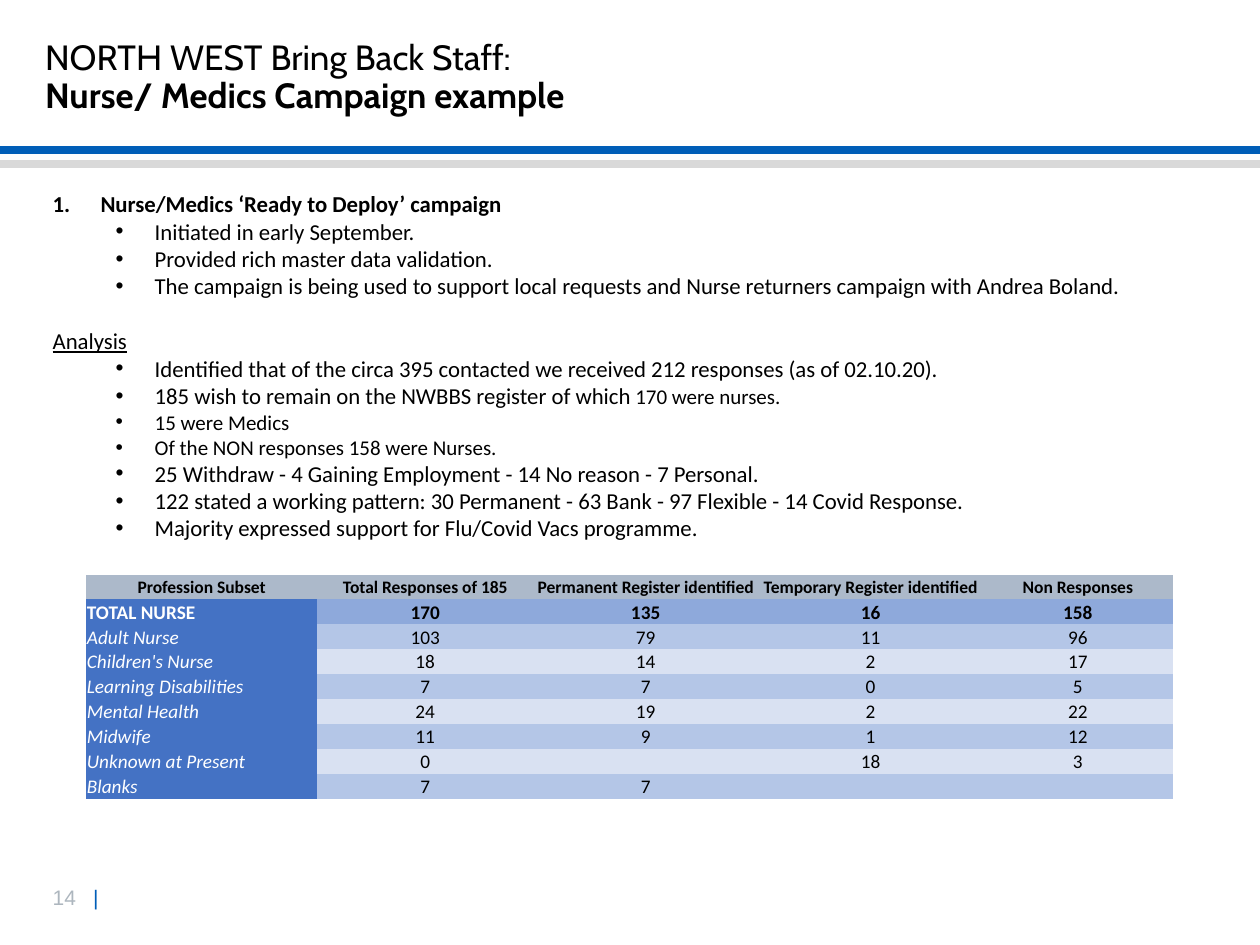
from dataclasses import dataclass
from lxml.etree import SubElement
from pptx import Presentation
from pptx.dml.color import RGBColor
from pptx.enum.shapes import MSO_CONNECTOR
from pptx.enum.text import MSO_ANCHOR, PP_ALIGN
from pptx.oxml.ns import qn
from pptx.util import Inches, Pt


@dataclass(frozen=True)
class Theme:
    black: str = "000000"
    white: str = "FFFFFF"
    blue: str = "005EB8"
    rule: str = "D9D9D9"
    mute: str = "ADB6BE"
    head: str = "ACB9CA"
    side: str = "4472C4"
    total: str = "8EA9DB"
    bands: tuple = ("B4C6E7", "D9E1F2")
    title: int = 20
    body: int = 13
    note: int = 12
    cell: int = 11
    label: int = 10
    text_font: str = "Calibri"
    title_font: str = "Cabin"
    page_font: str = "Arial"


@dataclass(frozen=True)
class Box:
    col: float
    row: float
    wide: float
    high: float


@dataclass(frozen=True)
class Line:
    texts: tuple
    mark: str = ""
    bold: bool = False
    under: bool = False
    gap: float = 0


THEME = Theme()
COLS, ROWS = 100, 75
NO_STYLE = "{2D5ABB26-0587-4C30-8999-92F81FD0307C}"
SMALL, FULL = THEME.note, THEME.body


def point(text: str, size: int = FULL) -> Line:
    return Line(((text, size),), "•")


LINES = [
    Line((("Nurse/Medics ‘Ready to Deploy’ campaign", FULL),), "1.", bold=True),
    point("Initiated in early September."),
    point("Provided rich master data validation."),
    point("The campaign is being used to support local requests and "
          "Nurse returners campaign with Andrea Boland."),
    Line((("Analysis", FULL),), under=True, gap=15.8),
    point("Identified that of the circa 395 contacted we received 212 responses (as of 02.10.20)."),
    Line((("185 wish to remain on the NWBBS register of which ", FULL),
          ("170 were nurses.", SMALL)), "•"),
    point("15 were Medics", SMALL),
    point("Of the NON responses 158 were Nurses.", SMALL),
    point("25 Withdraw - 4 Gaining Employment - 14 No reason - 7 Personal."),
    point("122 stated a working pattern: 30 Permanent - 63 Bank - 97 Flexible - 14 Covid Response."),
    point("Majority expressed support for Flu/Covid Vacs programme."),
]

GRID = [
    ("Profession Subset", "Total Responses of 185", "Permanent Register identified",
     "Temporary Register identified", "Non Responses"),
    ("TOTAL NURSE", "170", "135", "16", "158"),
    ("Adult Nurse", "103", "79", "11", "96"),
    ("Children's Nurse", "18", "14", "2", "17"),
    ("Learning Disabilities", "7", "7", "0", "5"),
    ("Mental Health", "24", "19", "2", "22"),
    ("Midwife", "11", "9", "1", "12"),
    ("Unknown at Present", "0", "", "18", "3"),
    ("Blanks", "7", "7", "", ""),
]
WIDTHS = (18.4, 17.1, 17.9, 17.8, 15.1)

deck = Presentation()
deck.slide_width, deck.slide_height = Inches(10), Inches(7.5)
slide = deck.slides.add_slide(deck.slide_layouts[6])


def across(cols: float) -> int:
    return round(deck.slide_width * cols / COLS)


def down(rows: float) -> int:
    return round(deck.slide_height * rows / ROWS)


def place(box: Box) -> tuple:
    return across(box.col), down(box.row), across(box.wide), down(box.high)


def style(run, size: int, font: str, tint: str, bold: bool = False) -> None:
    run.font.size, run.font.name, run.font.bold = Pt(size), font, bold
    run.font.color.rgb = RGBColor.from_string(tint)


def add_frame(box: Box):
    frame = slide.shapes.add_textbox(*place(box)).text_frame
    frame.word_wrap = True
    return frame


def add_rule(row: float, tint: str) -> None:
    rule = slide.shapes.add_connector(
        MSO_CONNECTOR.STRAIGHT, 0, down(row), across(COLS), down(row))
    rule.line.color.rgb = RGBColor.from_string(tint)
    rule.line.width = Pt(4.5)
    SubElement(rule._element.spPr, qn("a:effectLst"))


def add_mark(para, mark: str) -> None:
    props = para._p.get_or_add_pPr()
    left, hang = (0.81, 0.31) if mark == "•" else (0.38, 0.38)
    props.set("marL", str(Inches(left)))
    props.set("indent", str(-Inches(hang)))
    if mark == "•":
        props.set("lvl", "1")
        SubElement(props, qn("a:buFont"), typeface="Arial")
        SubElement(props, qn("a:buChar"), char=mark)
    else:
        SubElement(props, qn("a:buAutoNum"), type="arabicPeriod")


def add_title(box: Box) -> None:
    para = add_frame(box).paragraphs[0]
    para.text = "NORTH WEST Bring Back Staff:\vNurse/ Medics Campaign example"
    para.line_spacing = 0.9
    for run, bold in zip(para.runs, (False, True)):
        style(run, THEME.title, THEME.title_font, THEME.black, bold)


def add_body(box: Box) -> None:
    frame = add_frame(box)
    for spot, line in enumerate(LINES):
        para = frame.add_paragraph() if spot else frame.paragraphs[0]
        if line.gap:
            para.space_before = Pt(line.gap)
        if line.mark:
            add_mark(para, line.mark)
        for text, size in line.texts:
            run = para.add_run()
            run.text = text
            style(run, size, THEME.text_font, THEME.black, line.bold)
            run.font.underline = line.under


def fill_cell(cell, text: str, row: int, col: int) -> None:
    side = row > 0 and col == 0
    tint = (THEME.side if side else THEME.head if row == 0
            else THEME.total if row == 1 else THEME.bands[row % 2])
    cell.fill.solid()
    cell.fill.fore_color.rgb = RGBColor.from_string(tint)
    cell.margin_left = cell.margin_right = cell.margin_top = Inches(0.01)
    cell.margin_bottom = 0
    cell.vertical_anchor = MSO_ANCHOR.BOTTOM if row else MSO_ANCHOR.MIDDLE
    para = cell.text_frame.paragraphs[0]
    para.alignment = PP_ALIGN.LEFT if side else PP_ALIGN.CENTER
    if not text:
        SubElement(para._p, qn("a:endParaRPr"), sz=str(THEME.cell * 100))
        return
    para.text = text
    run = para.runs[0]
    style(run, THEME.cell if row else THEME.label, THEME.text_font,
          THEME.white if side else THEME.black, row < 2)
    run.font.italic = side and row > 1


def add_grid(box: Box) -> None:
    frame = slide.shapes.add_table(len(GRID), len(WIDTHS), *place(box))
    table = frame.table
    table.first_row = table.horz_banding = False
    table._tbl.tblPr.find(qn("a:tableStyleId")).text = NO_STYLE
    for col, wide in zip(table.columns, WIDTHS):
        col.width = across(wide)
    for row, texts in enumerate(GRID):
        table.rows[row].height = down(box.high / len(GRID))
        for col, text in enumerate(texts):
            fill_cell(table.cell(row, col), text, row, col)


def add_page(box: Box) -> None:
    para = add_frame(box).paragraphs[0]
    tabs = SubElement(para._p.get_or_add_pPr(), qn("a:tabLst"))
    SubElement(tabs, qn("a:tab"), pos=str(Inches(0.32)), algn="l")
    for text, tint in (("14\t", THEME.mute), ("|", THEME.blue)):
        run = para.add_run()
        run.text = text
        style(run, THEME.note, THEME.page_font, tint)


def main() -> None:
    add_page(Box(3.2, 69.7, 7.1, 3))
    add_rule(11.9, THEME.blue)
    add_rule(13, THEME.rule)
    add_title(Box(2.6, 2.7, 81.4, 8.1))
    add_body(Box(3.2, 14.6, 95.4, 38))
    add_grid(Box(6.8, 45.6, sum(WIDTHS), 17.8))
    deck.save("out.pptx")


if __name__ == "__main__":
    main()
